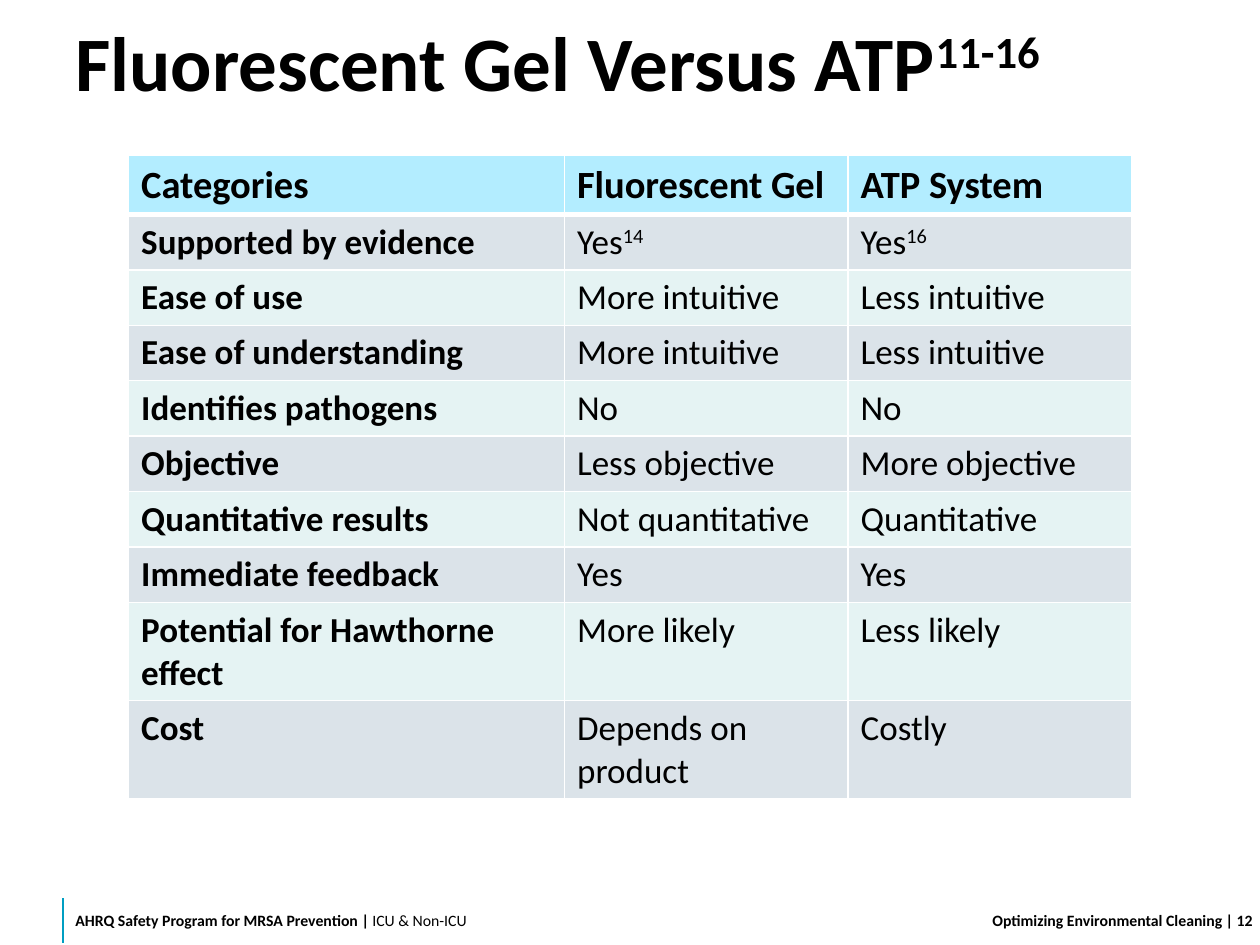
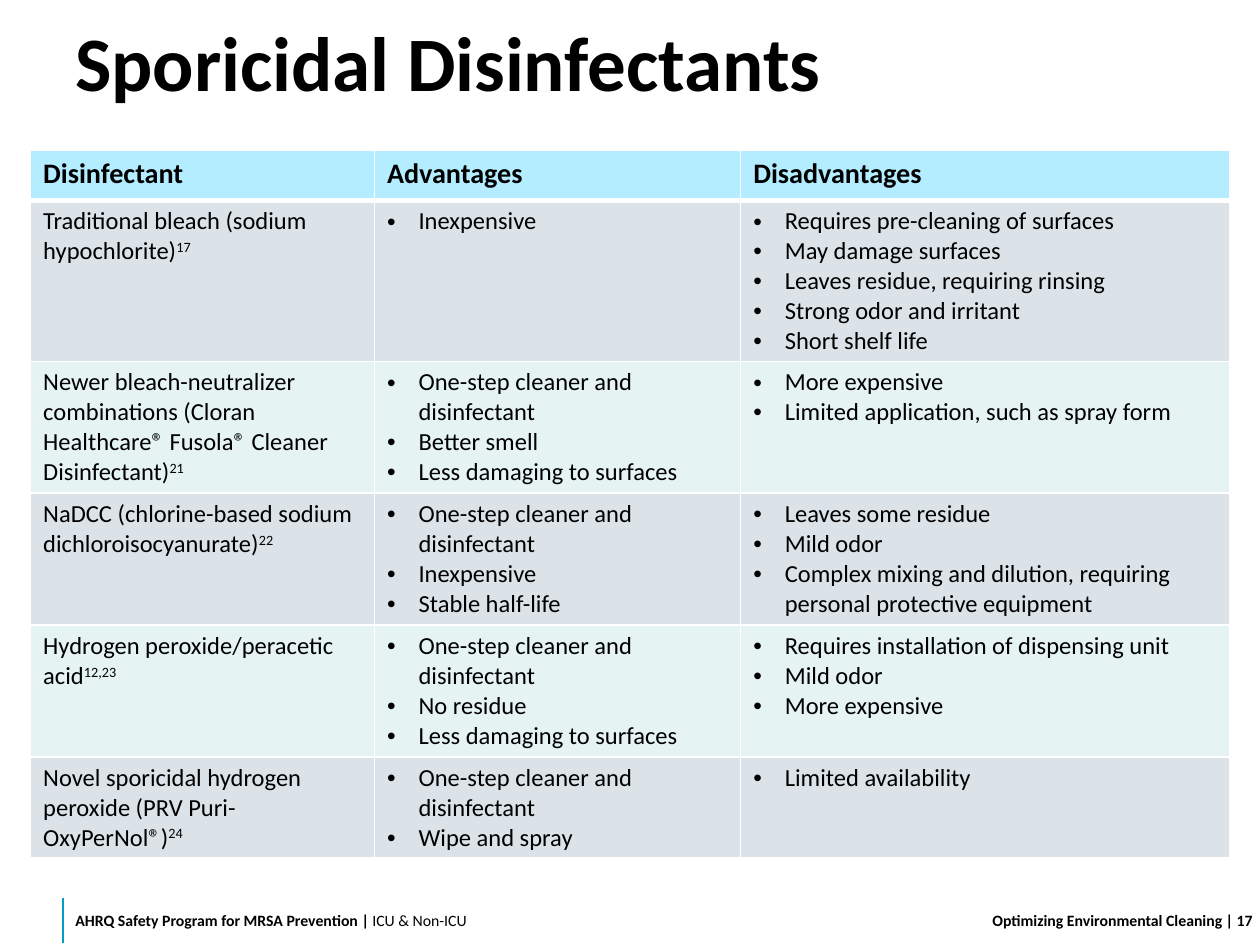
import pptx
import pptx.dml.color
import pptx.enum.shapes
import pptx.enum.text
import pptx.oxml.ns
import pptx.util
from lxml import etree

Pt = pptx.util.Pt
ALIGN = pptx.enum.text.PP_ALIGN

# Shared look
FONT = "Calibri"
BLACK, WHITE, TEAL = "000000", "FFFFFF", "009EC2"
HEADER_FILL = "B3EDFF"
BAND_FILLS = ["DBE3E9", "E5F3F3"]
FOOTER_TOP, FOOTER_HEIGHT, FOOTER_SIZE = 511.2, 28.8, 9
BULLET_INDENT = 18

# Table content: "^" starts or ends a superscript, a list is a bulleted cell
GEL_VERSUS_ATP = [
    ["Categories", "Fluorescent Gel", "ATP System"],
    ["Supported by evidence", "Yes^14", "Yes^16"],
    ["Ease of use", "More intuitive", "Less intuitive"],
    ["Ease of understanding", "More intuitive", "Less intuitive"],
    ["Identifies pathogens", "No", "No"],
    ["Objective", "Less objective", "More objective"],
    ["Quantitative results", "Not quantitative", "Quantitative"],
    ["Immediate feedback", "Yes", "Yes"],
    ["Potential for Hawthorne effect", "More likely", "Less likely"],
    ["Cost", "Depends on product", "Costly"],
]
ONE_STEP = "One-step cleaner and disinfectant"
DISINFECTANTS = [
    ["Disinfectant", "Advantages", "Disadvantages"],
    ["Traditional bleach (sodium hypochlorite)^17",
     ["Inexpensive"],
     ["Requires pre-cleaning of surfaces", "May damage surfaces",
      "Leaves residue, requiring rinsing", "Strong odor and irritant",
      "Short shelf life"]],
    ["Newer bleach-neutralizer combinations (Cloran Healthcare® Fusola® "
     "Cleaner Disinfectant)^21",
     [ONE_STEP, "Better smell", "Less damaging to surfaces"],
     ["More expensive", "Limited application, such as spray form"]],
    ["NaDCC (chlorine-based sodium dichloroisocyanurate)^22",
     [ONE_STEP, "Inexpensive", "Stable half-life"],
     ["Leaves some residue", "Mild odor",
      "Complex mixing and dilution, requiring personal protective equipment"]],
    ["Hydrogen peroxide/peracetic acid^12,23",
     [ONE_STEP, "No residue", "Less damaging to surfaces"],
     ["Requires installation of dispensing unit", "Mild odor",
      "More expensive"]],
    ["Novel sporicidal hydrogen peroxide (PRV Puri-OxyPerNol®)^24",
     [ONE_STEP, "Wipe and spray"],
     ["Limited availability"]],
]


def color(hex_value):
    return pptx.dml.color.RGBColor.from_string(hex_value)


def sub(parent, tag, **attributes):
    return etree.SubElement(parent, pptx.oxml.ns.qn(tag), attributes)


def style_run(r, size, bold):
    r.font.name = FONT
    r.font.size = Pt(size)
    r.font.bold = bold
    r.font.color.rgb = color(BLACK)


def write(p, text, size, bold=False):
    """Fill a paragraph; every second part between "^" marks is raised."""
    parts = text.split("^")
    p.text = parts[0]
    for part in parts[1:]:
        p.add_run().text = part
    for i, r in enumerate(p.runs):
        style_run(r, size, bold)
        if i % 2:
            r.font._element.set("baseline", "30000")


def add_text(s, box, text, size, margins, align=ALIGN.LEFT):
    sp = s.shapes.add_textbox(*map(Pt, box))
    tf = sp.text_frame
    tf.word_wrap = True
    tf.vertical_anchor = pptx.enum.text.MSO_ANCHOR.MIDDLE
    (tf.margin_left, tf.margin_top,
     tf.margin_right, tf.margin_bottom) = map(Pt, margins)
    p = tf.paragraphs[0]
    write(p, text, size, bold=True)
    p.alignment = align
    return p


def add_title(s, text):
    p = add_text(s, (36, 0, 648, 72), text, 44, (7.2, 7.2, 7.2, 3.6))
    p.line_spacing = 0.9


def add_footer(s, number):
    line = s.shapes.add_connector(
        pptx.enum.shapes.MSO_CONNECTOR.STRAIGHT,
        Pt(36), Pt(513.4), Pt(36), Pt(538.6))
    line.line.color.rgb = color(TEAL)
    line.line.width = Pt(1)
    sub(line._element.spPr, "a:effectLst")

    p = add_text(s, (36, FOOTER_TOP, 295.2, FOOTER_HEIGHT),
                 "AHRQ Safety Program for MRSA Prevention | ",
                 FOOTER_SIZE, (7.2, 0, 7.2, 0))
    r = p.add_run()
    r.text = "ICU & Non-ICU"
    style_run(r, FOOTER_SIZE, False)
    add_text(s, (511.2, FOOTER_TOP, 187.2, FOOTER_HEIGHT),
             "Optimizing Environmental Cleaning",
             FOOTER_SIZE, (7.2, 3.6, 0, 3.6), ALIGN.RIGHT)
    add_text(s, (698.4, FOOTER_TOP, 21.6, FOOTER_HEIGHT),
             f" | {number}", FOOTER_SIZE, (0, 3.6, 0, 3.6))


def set_borders(cell, top, bottom):
    tcPr = cell._tc.get_or_add_tcPr()
    for side, width in (("L", 1), ("R", 1), ("T", top), ("B", bottom)):
        ln = sub(tcPr, f"a:ln{side}", w=str(Pt(width)))
        sub(sub(ln, "a:solidFill"), "a:srgbClr", val=WHITE)


def add_bullet(p):
    pPr = p._p.get_or_add_pPr()
    pPr.set("marL", str(Pt(BULLET_INDENT)))
    pPr.set("indent", str(-Pt(BULLET_INDENT)))
    sub(pPr, "a:buFont", typeface="Arial")
    sub(pPr, "a:buChar", char="•")


def fill_cell(cell, content, size, bold):
    tf = cell.text_frame
    bulleted = isinstance(content, list)
    for i, text in enumerate(content if bulleted else [content]):
        p = tf.add_paragraph() if i else tf.paragraphs[0]
        if bulleted:
            add_bullet(p)
        write(p, text, size, bold)


def add_grid(s, left, top, widths, heights, rows, header_size, body_size,
             bold_labels):
    table = s.shapes.add_table(
        len(rows), len(widths), Pt(left), Pt(top),
        Pt(sum(widths)), Pt(sum(heights))).table
    table.first_row = table.horz_banding = False
    for column, width in zip(table.columns, widths):
        column.width = Pt(width)
    for i, (row, height) in enumerate(zip(rows, heights)):
        table.rows[i].height = Pt(height)
        header = i == 0
        for j, content in enumerate(row):
            cell = table.cell(i, j)
            set_borders(cell, top=3 if i == 1 else 1, bottom=3 if header else 1)
            cell.fill.solid()
            cell.fill.fore_color.rgb = color(
                HEADER_FILL if header else BAND_FILLS[(i - 1) % 2])
            fill_cell(cell, content, header_size if header else body_size,
                      header or (bold_labels and j == 0))


def add_slide(prs, title, number):
    s = prs.slides.add_slide(prs.slide_layouts[6])
    add_footer(s, number)
    add_title(s, title)
    return s


def main():
    prs = pptx.Presentation()
    prs.slide_width, prs.slide_height = Pt(720), Pt(540)

    # Comparison of the two monitoring methods
    s = add_slide(prs, "Fluorescent Gel Versus ATP^11-16", 12)
    add_grid(s, 73.5, 88.8, [249.1, 162, 162],
             [33.7] + [31.7] * 7 + [56] * 2, GEL_VERSUS_ATP,
             header_size=22, body_size=20, bold_labels=True)

    # Pros and cons of each disinfectant
    s = add_slide(prs, "Sporicidal Disinfectants", 17)
    add_grid(s, 17.5, 85.7, [196.5, 209.3, 279.2],
             [28.8, 92] + [75.4] * 3 + [57.7], DISINFECTANTS,
             header_size=16.1, body_size=14, bold_labels=False)

    prs.save("out.pptx")


if __name__ == "__main__":
    main()
